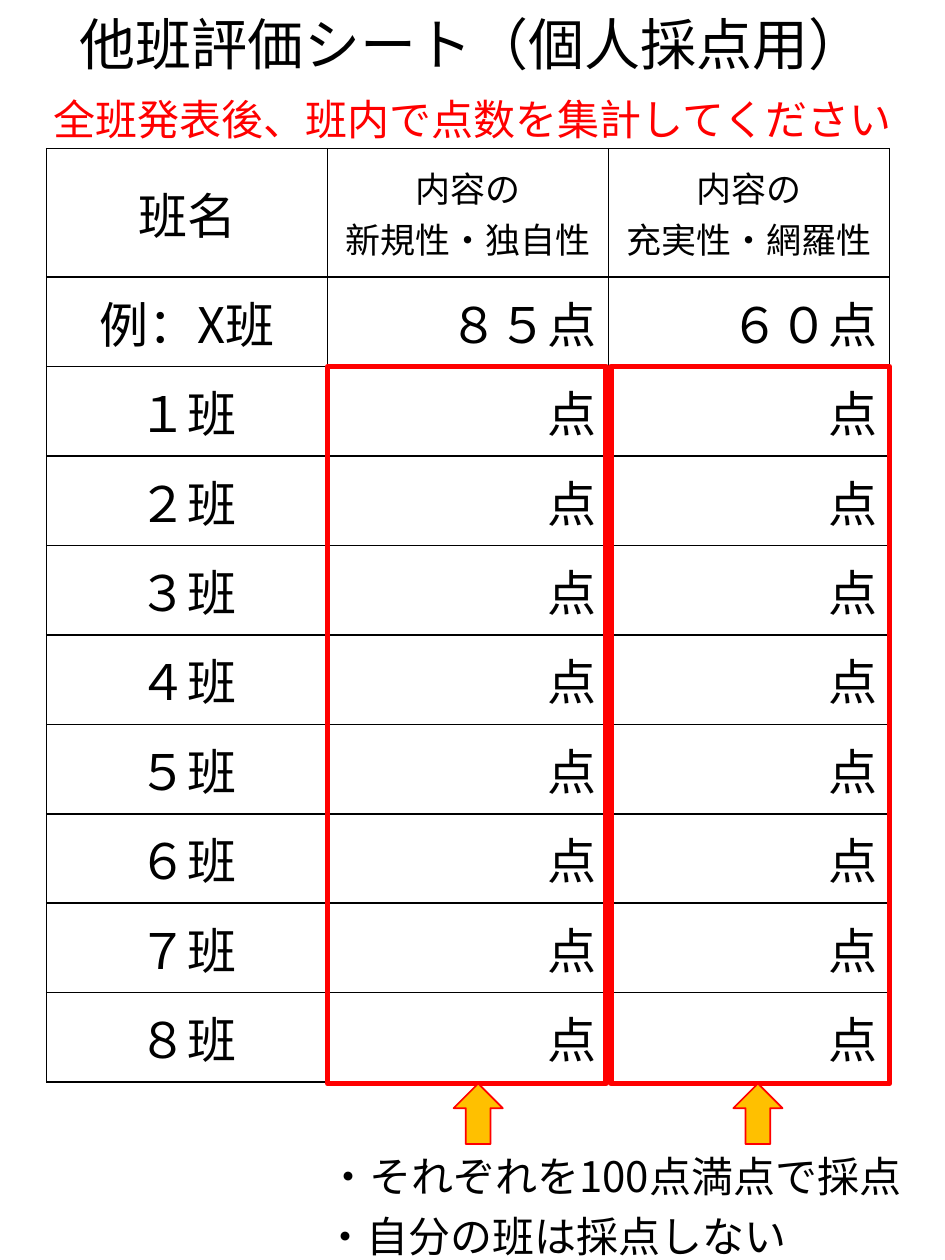
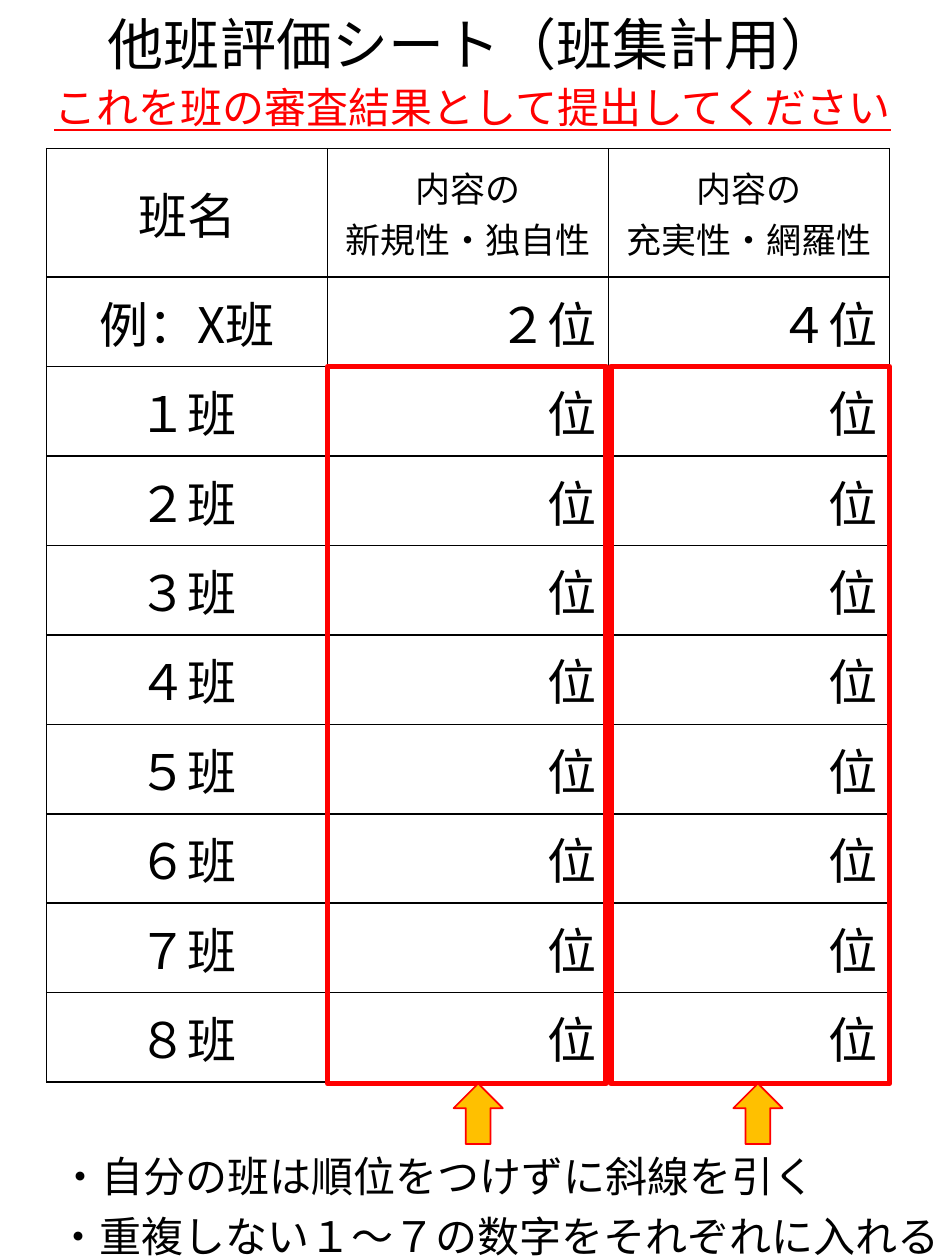
"""Build the two group review sheets: personal scores and group ranks."""
from lxml import etree
from pptx import Presentation
from pptx import util as u
from pptx.dml.color import RGBColor
from pptx.enum import shapes, text
from pptx.oxml import ns

BLACK = RGBColor(0x00, 0x00, 0x00)
RED = RGBColor(0xFF, 0x00, 0x00)
GOLD = RGBColor(0xFF, 0xC0, 0x00)
FONT = "Noto Sans CJK JP"
CENTER, LEFT, RIGHT = text.PP_ALIGN.CENTER, text.PP_ALIGN.LEFT, text.PP_ALIGN.RIGHT

COL, HEAD, ROW = 2.23, 1.02, 0.71
GROUPS = "１２３４５６７８"
TITLES = ("内容の", "新規性・独自性"), ("内容の", "充実性・網羅性")

SHEETS = [
    {
        "title": "他班評価シート（個人採点用）",
        "lead": ("全班発表後、班内で点数を集計してください", 0.69, False),
        "marks": ("８５", "６０"),
        "unit": "点",
        "notes": [("・それぞれを100点満点で採点", 2.5, 9.08, 6),
                  ("・自分の班は採点しない", 2.48, 9.56, 6)],
    },
    {
        "title": "他班評価シート（班集計用）",
        "lead": ("これを班の審査結果として提出してください", 0.6, True),
        "marks": ("２", "４"),
        "unit": "位",
        "notes": [("・自分の班は順位をつけずに斜線を引く", 0.37, 9.08, 6.69),
                  ("・重複しない１～７の数字をそれぞれに入れる", 0.36, 9.56, 7.67)],
    },
]


def box(left, top, width, height):
    """Turn four lengths in inches into a position and size."""
    return [u.Inches(n) for n in (left, top, width, height)]


def write(frame, lines, size, align, color=BLACK, under=False):
    """Write each line as one paragraph holding one run."""
    for i, line in enumerate(lines):
        para = frame.add_paragraph() if i else frame.paragraphs[0]
        para.alignment = align
        run = para.add_run()
        run.text = line
        font = run.font
        font.name, font.size = FONT, u.Pt(size)
        font.color.rgb = color
        if under:
            font.underline = True
        props = run._r.get_or_add_rPr()
        east = etree.Element(ns.qn("a:ea"), typeface=FONT)
        props.find(ns.qn("a:latin")).addnext(east)


def label(slide, line, place, size, align=LEFT, color=BLACK, under=False):
    """Add a line of text in a box that grows with it."""
    frame = slide.shapes.add_textbox(*box(*place)).text_frame
    frame.word_wrap = True
    frame.auto_size = text.MSO_AUTO_SIZE.SHAPE_TO_FIT_TEXT
    write(frame, [line], size, align, color, under)


def edge(cell):
    """Draw thin black borders around a cell."""
    props = cell._tc.get_or_add_tcPr()
    for side in ("lnL", "lnR", "lnT", "lnB"):
        line = etree.SubElement(props, ns.qn(f"a:{side}"), w=str(u.Pt(1)))
        fill = etree.SubElement(line, ns.qn("a:solidFill"))
        etree.SubElement(fill, ns.qn("a:srgbClr"), val=str(BLACK))


def grid(slide, marks, unit):
    """Add the table with a head row, a sample row and a row per group."""
    rows = [(("班名",), *TITLES)]
    rows.append((("例：X班",), *((mark + unit,) for mark in marks)))
    rows += [((f"{group}班",), (unit,), (unit,)) for group in GROUPS]
    place = box(0.37, 1.18, 3 * COL, HEAD + ROW * (len(rows) - 1))
    table = slide.shapes.add_table(len(rows), 3, *place).table
    table.first_row = table.horz_banding = False
    for col in table.columns:
        col.width = u.Inches(COL)
    for r, row in enumerate(rows):
        table.rows[r].height = u.Inches(ROW if r else HEAD)
        for c, lines in enumerate(row):
            cell = table.cell(r, c)
            cell.vertical_anchor = text.MSO_ANCHOR.MIDDLE
            edge(cell)
            cell.fill.background()
            write(cell.text_frame, lines, 20 if len(lines) > 1 else 28,
                  RIGHT if r and c else CENTER)


def shape(slide, kind, place, width, fill=None):
    """Add a red outlined shape, filled if a colour is given."""
    item = slide.shapes.add_shape(kind, *box(*place))
    item.shadow.inherit = False
    item.line.color.rgb, item.line.width = RED, u.Pt(width)
    if fill is None:
        item.fill.background()
    else:
        item.fill.solid()
        item.fill.fore_color.rgb = fill


def sheet(deck, title, lead, marks, unit, notes):
    """Add one review sheet slide."""
    slide = deck.slides.add_slide(deck.slide_layouts[6])
    grid(slide, marks, unit)
    for left in (2.6, 4.85):
        shape(slide, shapes.MSO_SHAPE.RECTANGLE, (left, 2.91, 2.21, 5.69), 3)
    for left in (3.6, 5.82):
        shape(slide, shapes.MSO_SHAPE.UP_ARROW, (left, 8.6, 0.39, 0.48), 1, GOLD)
    label(slide, title, (0, 0.03, 7.5, 0.64), 32, CENTER)
    line, top, under = lead
    label(slide, line, (0, top, 7.5, 0.5), 24, CENTER, RED, under)
    for line, left, top, width in notes:
        label(slide, line, (left, top, width, 0.5), 24)


def main():
    """Build and save the deck."""
    deck = Presentation()
    deck.slide_width, deck.slide_height = u.Inches(7.5), u.Inches(10)
    for data in SHEETS:
        sheet(deck, **data)
    deck.save("out.pptx")


if __name__ == "__main__":
    main()
